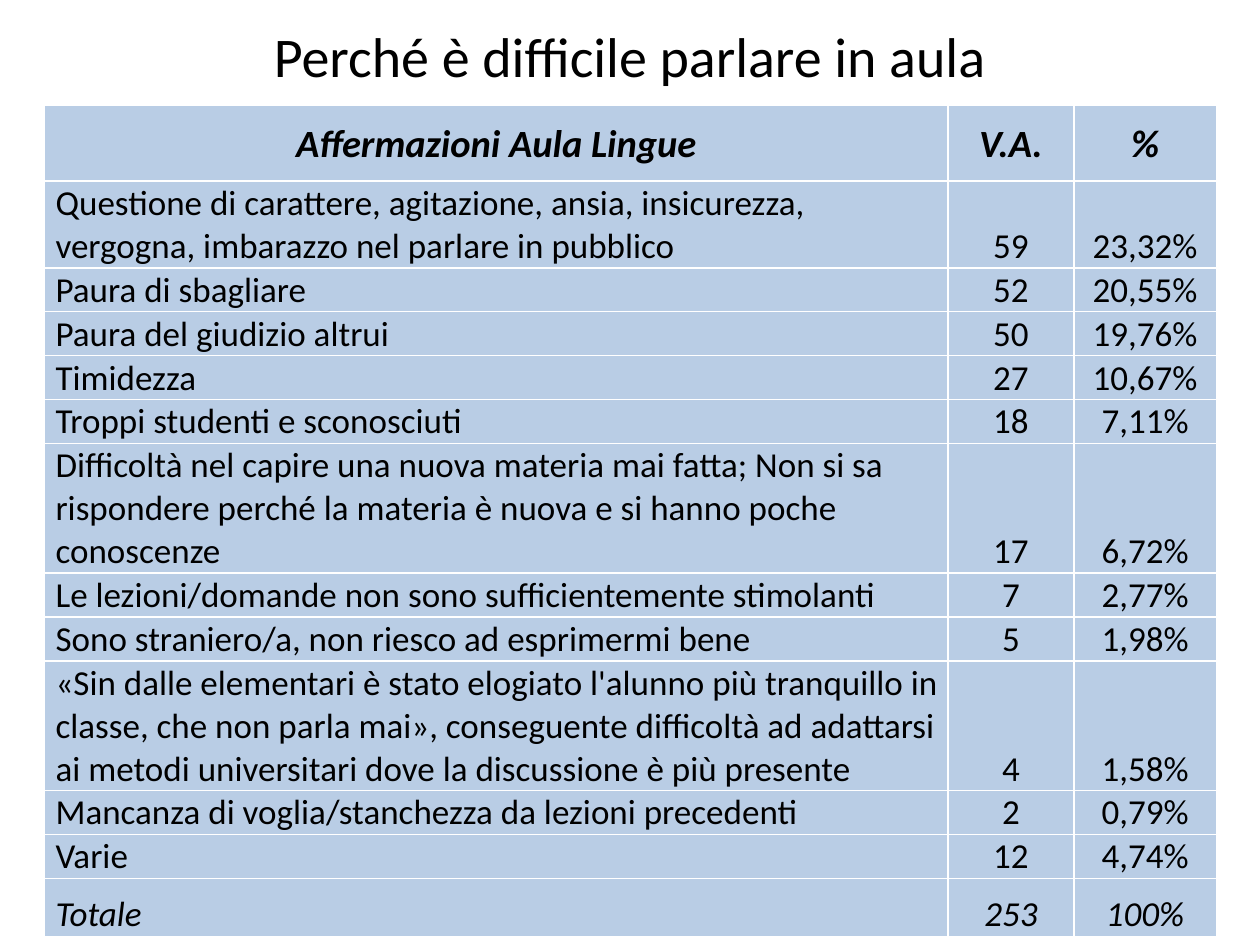
from lxml import etree
from pptx import Presentation
from pptx import util as u
from pptx.dml.color import RGBColor
from pptx.enum import text
from pptx.oxml.ns import qn

COLORS = {"text": "000000", "cell": "B9CDE5", "border": "FFFFFF"}
FONT = "Calibri"
COLUMN_WIDTHS = [18.21, 2.54, 2.87]
ROW_HEIGHTS = [1.52, 1.63] + [0.81] * 4 + [1.63] + [0.81] * 2 + [2.46] + [0.81] * 2 + [1.17]
LAST_MIDDLE_ROW = 5  # statements up to this row are centred vertically
ROWS = [
    ("Affermazioni Aula Lingue", "V.A.", "%"),
    ("Questione di carattere, agitazione, ansia, insicurezza, vergogna, "
     "imbarazzo nel parlare in pubblico", "59", "23,32%"),
    ("Paura di sbagliare", "52", "20,55%"),
    ("Paura del giudizio altrui", "50", "19,76%"),
    ("Timidezza", "27", "10,67%"),
    ("Troppi studenti e sconosciuti", "18", "7,11%"),
    ("Difficoltà nel capire una nuova materia mai fatta; Non si sa rispondere "
     "perché la materia è nuova e si hanno poche conoscenze", "17", "6,72%"),
    ("Le lezioni/domande non sono sufficientemente stimolanti", "7", "2,77%"),
    ("Sono straniero/a, non riesco ad esprimermi bene", "5", "1,98%"),
    ("«Sin dalle elementari è stato elogiato l'alunno più tranquillo in classe, "
     "che non parla mai», conseguente difficoltà ad adattarsi ai metodi "
     "universitari dove la discussione è più presente", "4", "1,58%"),
    ("Mancanza di voglia/stanchezza da lezioni precedenti", "2", "0,79%"),
    ("Varie", "12", "4,74%"),
    ("Totale", "253", "100%"),
]


def format_paragraph(para, size, align, bold=False, italic=False):
    para.alignment = align
    for span in para.runs:
        font = span.font
        font.name, font.size = FONT, u.Pt(size)
        font.bold, font.italic = bold, italic
        font.color.rgb = RGBColor.from_string(COLORS["text"])


def set_borders(cell):
    props = cell._tc.get_or_add_tcPr()
    for index, side in enumerate(("lnL", "lnR", "lnT", "lnB")):
        line = etree.Element(qn(f"a:{side}"), w=str(u.Pt(1)))
        fill = etree.SubElement(line, qn("a:solidFill"))
        etree.SubElement(fill, qn("a:srgbClr"), val=COLORS["border"])
        props.insert(index, line)


def fill_cell(cell, content, row, column):
    header, total = row == 0, row == len(ROWS) - 1
    statement = column == 0 and not header
    middle = header or (statement and row <= LAST_MIDDLE_ROW)
    cell.text_frame.text = content
    cell.vertical_anchor = text.MSO_ANCHOR.MIDDLE if middle else text.MSO_ANCHOR.BOTTOM
    cell.margin_left = cell.margin_right = cell.margin_top = u.Cm(0.02)
    cell.margin_bottom = 0
    cell.fill.solid()
    cell.fill.fore_color.rgb = RGBColor.from_string(COLORS["cell"])
    set_borders(cell)
    para = cell.text_frame.paragraphs[0]
    align = text.PP_ALIGN.LEFT if statement else text.PP_ALIGN.CENTER
    format_paragraph(para, 22 if header else 20, align, header, header or total)
    if statement:
        props = para._p.get_or_add_pPr()
        props.set("marL", str(u.Cm(0.2)))
        props.set("indent", "0")


def add_title(page, content):
    title = page.shapes.title
    title.left, title.top = u.Cm(1.27), u.Cm(0.13)
    title.width, title.height = u.Cm(22.86), u.Cm(1.96)
    title.text_frame.text = content
    title.text_frame.vertical_anchor = text.MSO_ANCHOR.MIDDLE
    format_paragraph(title.text_frame.paragraphs[0], 32, text.PP_ALIGN.CENTER)


def add_answers_table(page):
    frame = page.shapes.add_table(len(ROWS), len(COLUMN_WIDTHS), u.Cm(0.9), u.Cm(2.13),
                                  u.Cm(sum(COLUMN_WIDTHS)), u.Cm(sum(ROW_HEIGHTS)))
    table = frame.table
    for column, width in zip(table.columns, COLUMN_WIDTHS):
        column.width = u.Cm(width)
    for row, height in zip(table.rows, ROW_HEIGHTS):
        row.height = u.Cm(height)
    for row, contents in enumerate(ROWS):
        for column, content in enumerate(contents):
            fill_cell(table.cell(row, column), content, row, column)


def main():
    deck = Presentation()
    deck.slide_width, deck.slide_height = u.Cm(25.4), u.Cm(19.05)
    page = deck.slides.add_slide(deck.slide_layouts[5])
    add_title(page, "Perché è difficile parlare in aula")
    add_answers_table(page)
    deck.save("out.pptx")


if __name__ == "__main__":
    main()
